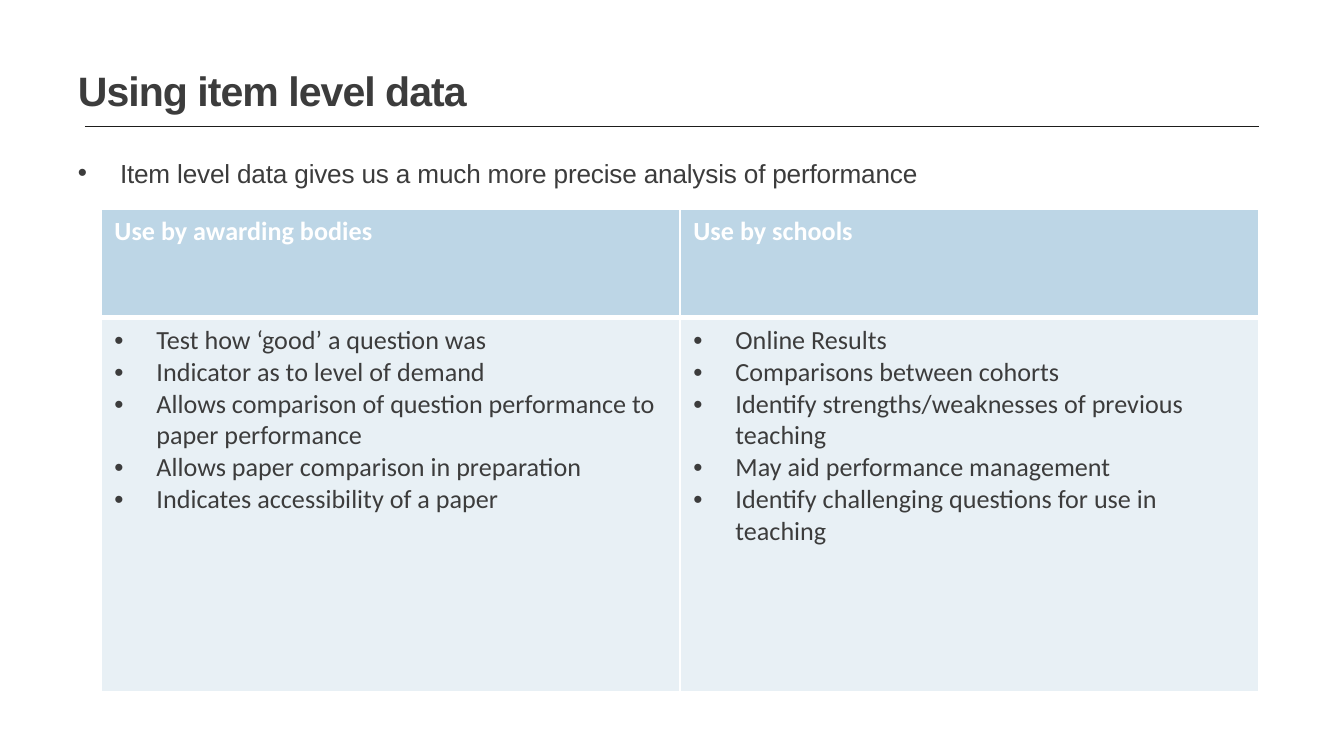
from dataclasses import dataclass

from lxml import etree
from pptx import Presentation
from pptx import util as u
from pptx.dml.color import RGBColor
from pptx.enum import shapes, text
from pptx.oxml import ns

EMU_PER_PX = 914400 / 134.4
SLIDE_W, SLIDE_H = 1344, 756


@dataclass(frozen=True)
class Theme:
    ink: str = "3C3C3C"
    rule: str = "1D1D1B"
    white: str = "FFFFFF"
    header_fill: str = "BDD6E6"
    body_fill: str = "E8F0F5"
    heading_font: str = "Arial"
    table_font: str = "Calibri"
    title_size: int = 22
    text_size: int = 14
    indent: int = 42


THEME = Theme()

USES = {
    "Use by awarding bodies": [
        "Test how ‘good’ a question was",
        "Indicator as to level of demand",
        "Allows comparison of question performance to paper performance",
        "Allows paper comparison in preparation",
        "Indicates accessibility of a paper",
    ],
    "Use by schools": [
        "Online Results",
        "Comparisons between cohorts",
        "Identify strengths/weaknesses of previous teaching",
        "May aid performance management",
        "Identify challenging questions for use in teaching",
    ],
}


def px(length):
    return u.Emu(round(length * EMU_PER_PX))


def add_bullet(paragraph):
    props = paragraph._p.get_or_add_pPr()
    props.set("marL", str(px(THEME.indent)))
    props.set("indent", str(-px(THEME.indent)))
    etree.SubElement(props, ns.qn("a:buFont"), typeface="Arial")
    etree.SubElement(props, ns.qn("a:buChar"), char="•")


def write(frame, lines, font=THEME.table_font, size=THEME.text_size,
          color=THEME.ink, bold=False, bullet=False, tracking=0):
    """Fill a text frame with one paragraph for each line."""
    for i, line in enumerate(lines):
        paragraph = frame.paragraphs[0] if i == 0 else frame.add_paragraph()
        paragraph.alignment = text.PP_ALIGN.LEFT
        paragraph.space_before = u.Pt(0)
        if bullet:
            add_bullet(paragraph)
        run = paragraph.add_run()
        run.text = line
        run.font.name, run.font.size, run.font.bold = font, u.Pt(size), bold
        run.font.color.rgb = RGBColor.from_string(color)
        if tracking:
            run._r.get_or_add_rPr().set("spc", str(round(tracking * 100)))


def place(placeholder, box):
    """Move a placeholder to the box and drop its margins."""
    placeholder.left, placeholder.top, placeholder.width, placeholder.height = map(px, box)
    frame = placeholder.text_frame
    frame.margin_left = frame.margin_top = frame.margin_right = frame.margin_bottom = 0
    frame.vertical_anchor = text.MSO_ANCHOR.TOP
    frame.auto_size = text.MSO_AUTO_SIZE.NONE
    frame.word_wrap = True
    return frame


def heading(slide, box):
    left, top, width, height = box
    # Title
    write(place(slide.shapes.title, (left, top, width, 50)), ["Using item level data"],
          font=THEME.heading_font, size=THEME.title_size, bold=True, tracking=-0.5)
    # Rule under the title
    rule_y = px(top + height)
    rule = slide.shapes.add_connector(shapes.MSO_CONNECTOR.STRAIGHT,
                                      px(left + 7), rule_y, px(left + width), rule_y)
    rule.line.color.rgb = RGBColor.from_string(THEME.rule)
    rule.line.width = u.Pt(0.52)
    etree.SubElement(rule._element.spPr, ns.qn("a:effectLst"))


def key_point(slide, box):
    write(place(slide.placeholders[1], box),
          ["Item level data gives us a much more precise analysis of performance"],
          font=THEME.heading_font, bullet=True, tracking=-0.1)


def style_cell(cell, fill, **borders):
    """Fill a cell and give it white borders, 1 pt unless another width is named."""
    cell.fill.solid()
    cell.fill.fore_color.rgb = RGBColor.from_string(fill)
    props = cell._tc.get_or_add_tcPr()
    for i, side in enumerate(("lnL", "lnR", "lnT", "lnB")):
        line = etree.Element(ns.qn(f"a:{side}"), w=str(u.Pt(borders.get(side, 1))))
        solid = etree.SubElement(line, ns.qn("a:solidFill"))
        etree.SubElement(solid, ns.qn("a:srgbClr"), val=THEME.white)
        props.insert(i, line)


def uses_table(slide, box):
    left, top, width, height = box
    header_height = 109
    table = slide.shapes.add_table(2, len(USES), *map(px, box)).table
    table.first_row = True
    table.horz_banding = False
    table.rows[0].height = px(header_height)
    table.rows[1].height = px(height - header_height)
    for col, (group, uses) in enumerate(USES.items()):
        table.columns[col].width = px(width / len(USES))
        header, body = table.cell(0, col), table.cell(1, col)
        style_cell(header, THEME.header_fill, lnB=3)
        write(header.text_frame, [group], color=THEME.white, bold=True)
        style_cell(body, THEME.body_fill, lnT=3)
        write(body.text_frame, uses, bullet=True)


def main():
    deck = Presentation()
    deck.slide_width, deck.slide_height = px(SLIDE_W), px(SLIDE_H)
    slide = deck.slides.add_slide(deck.slide_layouts.get_by_name("Title and Content"))
    heading(slide, (78, 65, 1181, 61))
    key_point(slide, (78, 157, 1181, 145))
    uses_table(slide, (101, 209, 1158, 483))
    deck.save("out.pptx")


if __name__ == "__main__":
    main()
